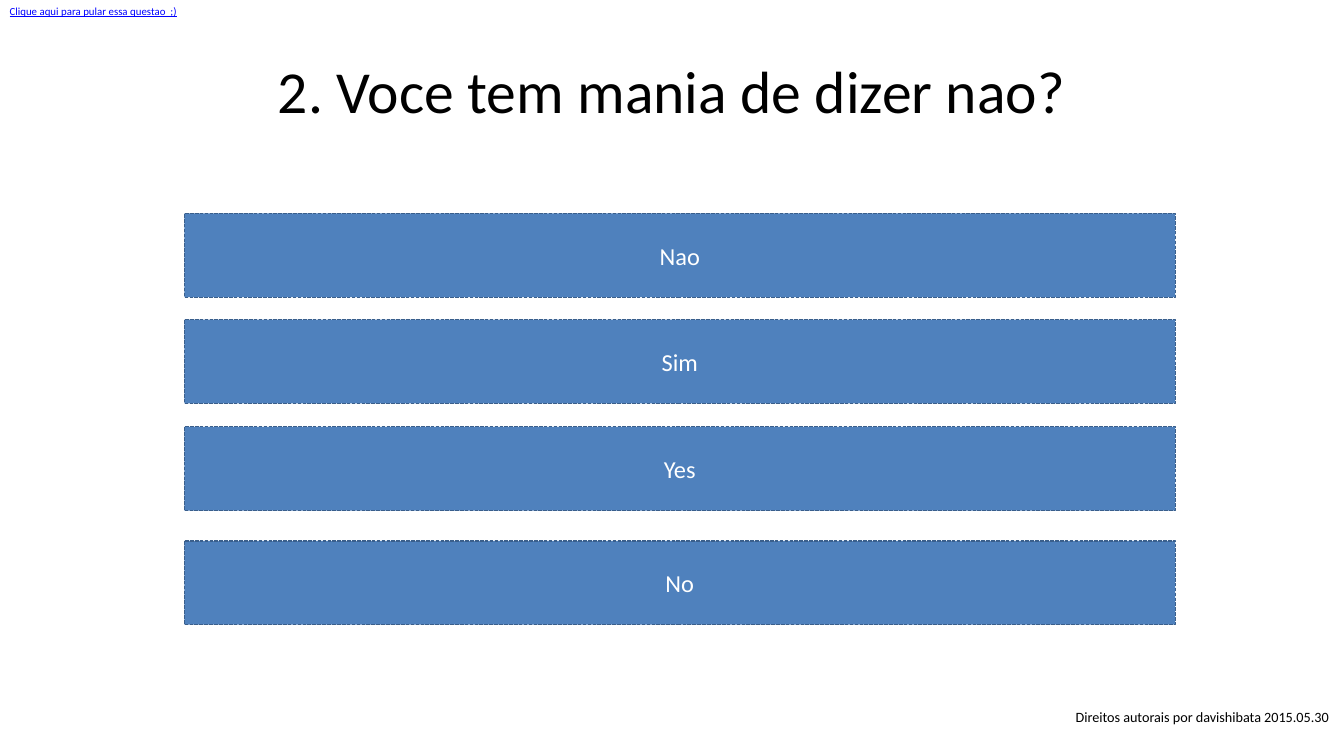
from pptx import Presentation
from pptx import util as u
from pptx.dml.color import RGBColor
from pptx.enum import dml, shapes, text

PX = u.Inches(1) // 100
FONT = "Calibri"
BLACK = RGBColor(0x00, 0x00, 0x00)
WHITE = RGBColor(0xFF, 0xFF, 0xFF)
BLUE = RGBColor(0x4F, 0x81, 0xBD)
DARK_BLUE = RGBColor(0x3A, 0x5F, 0x8C)
LINK_BLUE = RGBColor(0x00, 0x00, 0xFF)
ANSWERS = [("Nao", 0), ("Sim", 109), ("Yes", 219), ("No", 336)]


def scaled(box):
    """Turn a box of left, top, width and height in px into EMU."""
    return [length * PX for length in box]


def write(frame, words, size, color, align, underline=None):
    """Write one formatted run into the first paragraph of a text frame."""
    para = frame.paragraphs[0]
    para.alignment = align
    span = para.add_run()
    span.text = words
    span.font.name = FONT
    span.font.size = u.Pt(size)
    span.font.color.rgb = color
    span.font.underline = underline


def add_title(page, box, words):
    """Place the question in the title placeholder."""
    title = page.shapes.title
    title.left, title.top, title.width, title.height = scaled(box)
    title.text_frame.vertical_anchor = text.MSO_ANCHOR.MIDDLE
    write(title.text_frame, words, 44, BLACK, text.PP_ALIGN.CENTER)


def add_note(page, box, words, size, color, underline=None):
    """Add a small one-line text box that fits its text."""
    note = page.shapes.add_textbox(*scaled(box))
    note.text_frame.word_wrap = False
    note.text_frame.auto_size = text.MSO_AUTO_SIZE.SHAPE_TO_FIT_TEXT
    write(note.text_frame, words, size, color, text.PP_ALIGN.LEFT, underline)


def add_answers(page, box, answers, bar_height):
    """Stack the answer bars at their offsets from the top of the box."""
    left, top, width, _ = box
    for words, offset in answers:
        bar = page.shapes.add_shape(
            shapes.MSO_SHAPE.RECTANGLE,
            *scaled((left, top + offset, width, bar_height)))
        bar.shadow.inherit = False
        bar.fill.solid()
        bar.fill.fore_color.rgb = BLUE
        bar.line.color.rgb = DARK_BLUE
        bar.line.width = u.Pt(0.9)
        bar.line.dash_style = dml.MSO_LINE.SQUARE_DOT
        bar.text_frame.vertical_anchor = text.MSO_ANCHOR.MIDDLE
        write(bar.text_frame, words, 18, WHITE, text.PP_ALIGN.CENTER)


def add_question_page(deck):
    """Build the question slide with its answers, skip text and credit."""
    page = deck.slides.add_slide(deck.slide_layouts.get_by_name("Title Only"))
    add_note(page, (1093, 722, 285, 28),
             "Direitos autorais por davishibata 2015.05.30", 10.5, BLACK)
    add_title(page, (69, 30, 1240, 125), "2. Voce tem mania de dizer nao?")
    add_answers(page, (189, 219, 1016, 422), ANSWERS, 86)
    add_note(page, (0, 0, 194, 24),
             "Clique aqui para pular essa questao  ;)", 8, LINK_BLUE, True)


def main():
    """Create and save the deck."""
    deck = Presentation()
    deck.slide_width, deck.slide_height = 1378 * PX, 750 * PX
    add_question_page(deck)
    deck.save("out.pptx")


if __name__ == "__main__":
    main()
